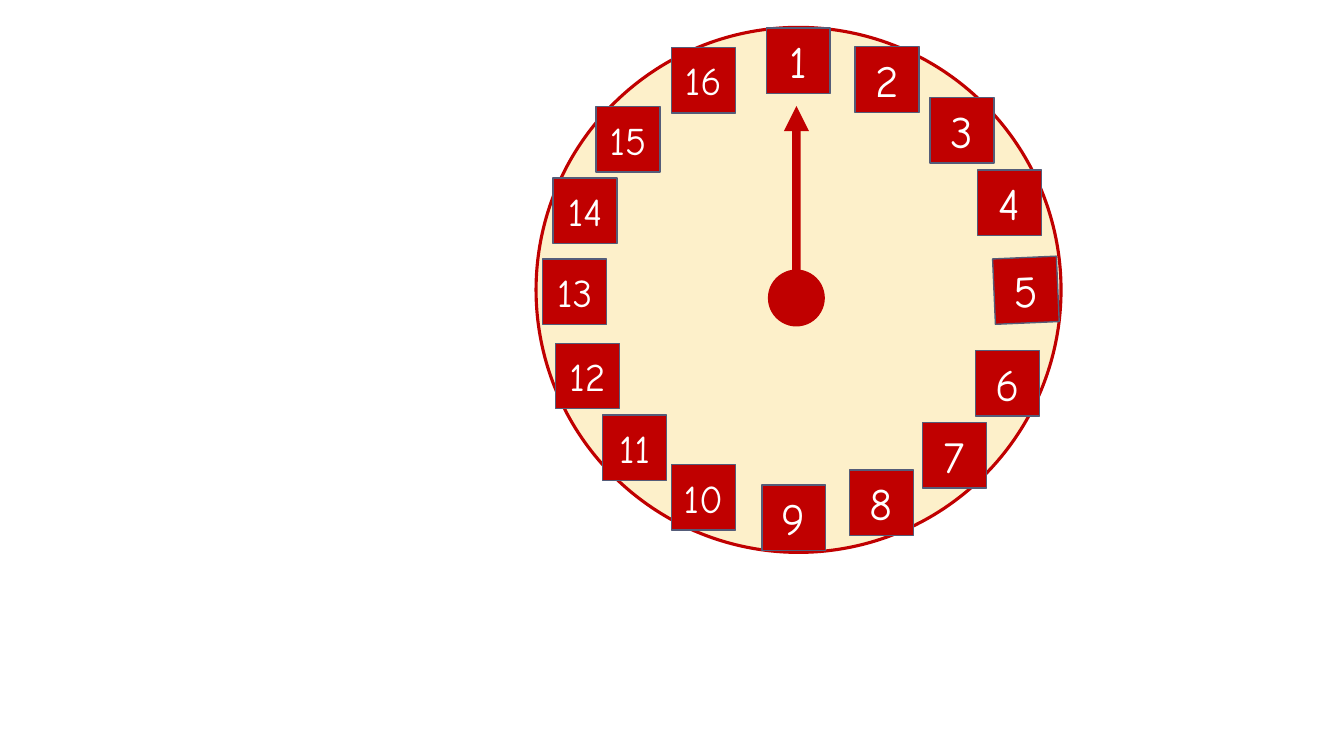
from lxml import etree
from pptx import Presentation
from pptx.dml.color import RGBColor
from pptx.enum.shapes import MSO_CONNECTOR, MSO_SHAPE
from pptx.enum.text import MSO_ANCHOR, PP_ALIGN
from pptx.oxml.ns import qn
from pptx.util import Cm, Pt

RECT, OVAL = MSO_SHAPE.RECTANGLE, MSO_SHAPE.OVAL
STRAIGHT = MSO_CONNECTOR.STRAIGHT
CENTER, MIDDLE = PP_ALIGN.CENTER, MSO_ANCHOR.MIDDLE

FONT = "Comic Neue"
RED, CREAM, SLATE, WHITE = "C00000", "FDF0CA", "545C79", "FFFFFF"
TILE_WIDTH, TILE_HEIGHT = 1.61, 1.65
TILE_CORNERS = [
    (19.31, 0.71), (21.55, 1.18), (23.44, 2.46), (24.64, 4.28),
    (25.05, 6.49), (24.59, 8.83), (23.25, 10.65), (21.41, 11.84),
    (19.2, 12.22), (16.92, 11.71), (15.19, 10.46), (14.0, 8.65),
    (13.68, 6.53), (13.94, 4.49), (15.02, 2.69), (16.92, 1.2),
]
TILTED_TILE, TILT = 5, 357.5


def color(hex_string):
    return RGBColor.from_string(hex_string)


def add_box(shapes, kind, left, top, width, height, fill, line, weight=1):
    sp = shapes.add_shape(kind, Cm(left), Cm(top), Cm(width), Cm(height))
    sp.shadow.inherit = False
    sp.fill.solid()
    sp.fill.fore_color.rgb = color(fill)
    sp.line.color.rgb = color(line)
    sp.line.width = Pt(weight)
    return sp


def set_text(sp, text, size, font=FONT, fill=WHITE):
    tf = sp.text_frame
    tf.word_wrap = True
    tf.margin_left = tf.margin_right = 0
    tf.vertical_anchor = MIDDLE
    p = tf.paragraphs[0]
    p.alignment = CENTER
    r = p.add_run()
    r.text = text
    r.font.size = Pt(size)
    r.font.name = font
    r.font.color.rgb = color(fill)


def add_hand(shapes, hub, tip_x, tip_y, line, weight):
    hand = shapes.add_connector(STRAIGHT, Cm(tip_x), Cm(tip_y), Cm(tip_x), hub.top)
    hand.end_connect(hub, 0)
    hand.line.color.rgb = color(line)
    hand.line.width = Pt(weight)
    ln = hand.line._get_or_add_ln()
    etree.SubElement(ln, qn("a:headEnd"), type="triangle")
    etree.SubElement(hand._element.spPr, qn("a:effectLst"))


def add_tile(shapes, number, left, top):
    tile = add_box(shapes, RECT, left, top, TILE_WIDTH, TILE_HEIGHT, RED, SLATE)
    set_text(tile, str(number), size=32 if number < 10 else 28)
    if number == TILTED_TILE:
        tile.rotation = TILT


def main():
    prs = Presentation()
    prs.slide_width, prs.slide_height = Cm(33.87), Cm(19.05)
    s = prs.slides.add_slide(prs.slide_layouts[6])
    add_box(s.shapes, OVAL, 13.51, 0.69, 13.23, 13.23, CREAM, RED, 2.25)
    for number, (left, top) in enumerate(TILE_CORNERS, start=1):
        add_tile(s.shapes, number, left, top)
    hub = add_box(s.shapes, OVAL, 19.37, 6.81, 1.4, 1.4, RED, RED)
    add_hand(s.shapes, hub, 20.07, 2.67, RED, 6)
    prs.save("out.pptx")


if __name__ == "__main__":
    main()
